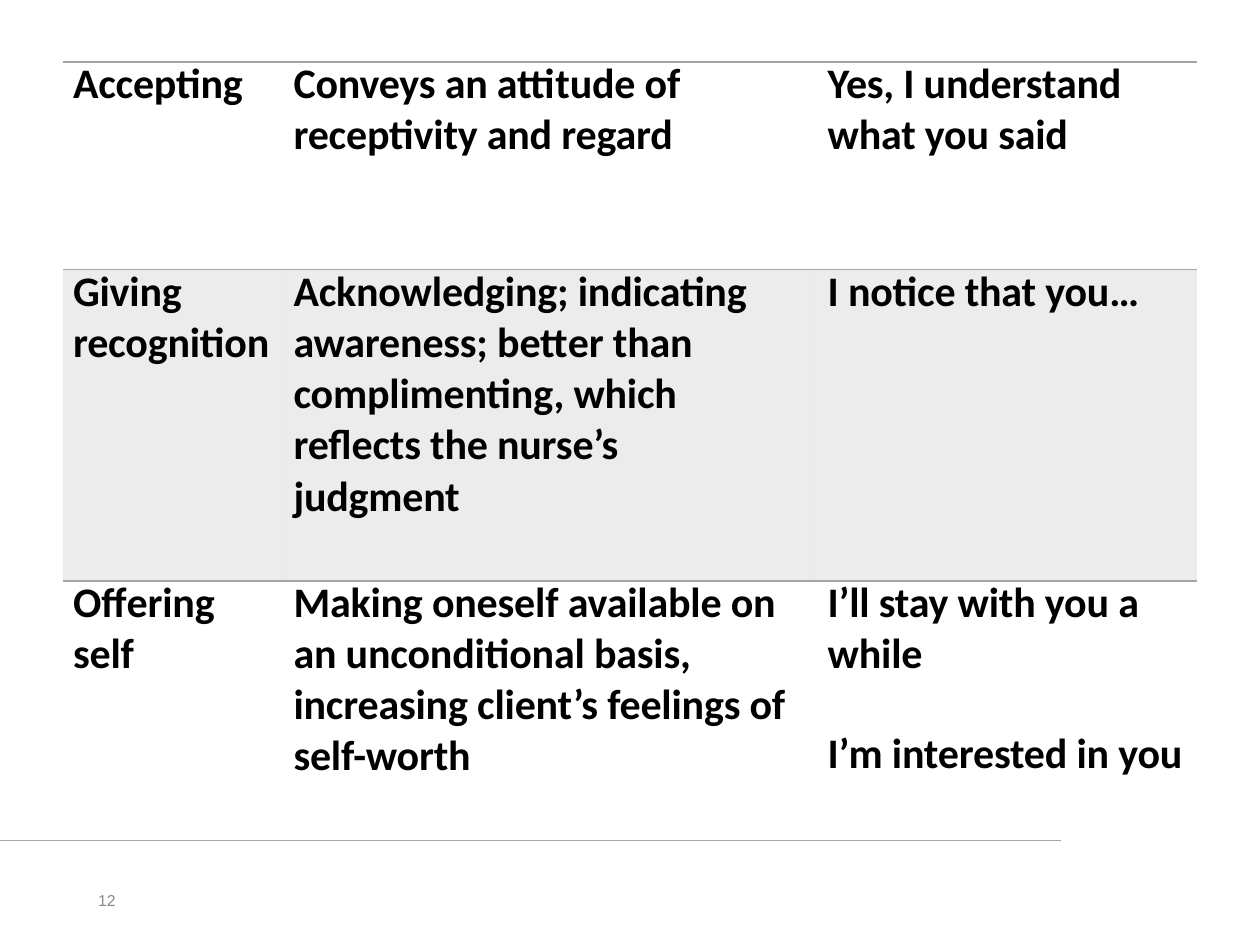
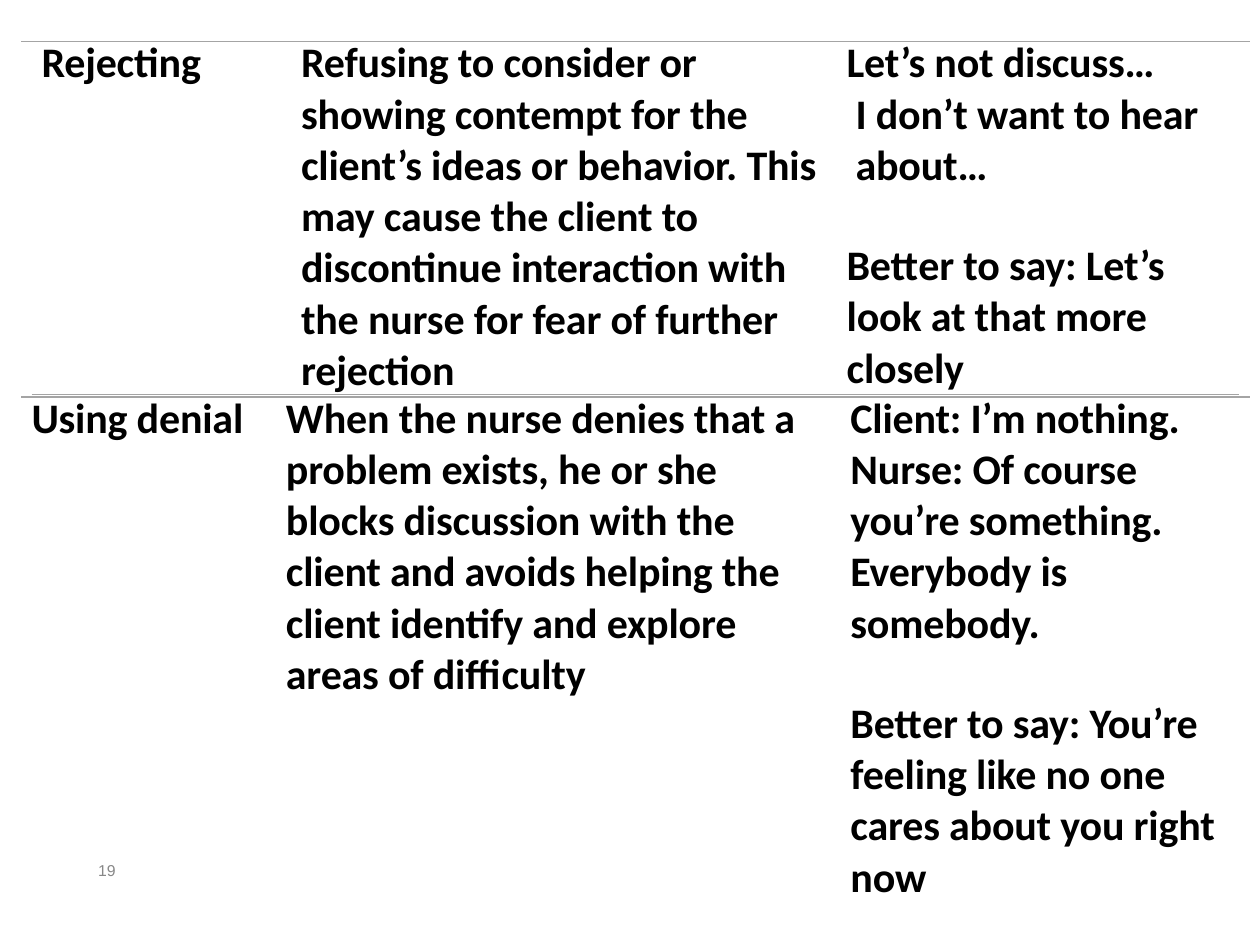
from dataclasses import dataclass

import pptx
import pptx.dml.color
import pptx.enum.shapes
import pptx.oxml
import pptx.oxml.ns
import pptx.util
from lxml import etree
from pptx.util import Inches, Pt

COLORS = {"text": "000000", "rule": "A4A4A4", "band": "A4A4A4", "number": "888888"}
BODY = {"name": "Calibri", "size": Pt(24), "bold": True}
NUMBER = {"name": "Arial", "size": Pt(9), "bold": False}
NO_STYLE = "{2D5ABB26-0587-4C30-8999-92F81FD0307C}"
FIRST_LINE = Pt(27.3)
GAP = 28


@dataclass
class Para:
    text: str
    gap: float = 0
    indent: float = 0


TECHNIQUES = [
    [[Para("Accepting")],
     [Para("Conveys an attitude of"), Para("receptivity and regard")],
     [Para("Yes, I understand"), Para("what you said")]],
    [[Para("Giving"), Para("recognition")],
     [Para("Acknowledging; indicating"), Para("awareness; better than complimenting, which"),
      Para("reflects the nurse’s\vjudgment")],
     [Para("I notice that you…")]],
    [[Para("Offering"), Para("self")],
     [Para("Making oneself available on"),
      Para("an unconditional basis, increasing client’s feelings of"), Para("self-worth")],
     [Para("I’ll stay with you a"), Para("while"), Para("I’m interested in you", GAP)]],
]
BARRIERS = [
    [[Para("Rejecting")],
     [Para("Refusing to consider or"),
      Para("showing contempt for the client’s ideas or behavior. This may cause the client to "
           "discontinue interaction with\vthe nurse for fear of further"),
      Para("rejection")],
     [Para("Let’s not discuss…"), Para("I don’t want to hear about…", indent=0.07),
      Para("Better to say: Let’s\vlook at that more closely", GAP)]],
    [[Para("Using denial")],
     [Para("When the nurse denies that a"),
      Para("problem exists, he or she\vblocks discussion with the\vclient and avoids helping the "
           "client identify and explore"),
      Para("areas of difficulty")],
     [Para("Client: I’m nothing."),
      Para("Nurse: Of course\vyou’re something. Everybody is\vsomebody."),
      Para("Better to say: You’re\vfeeling like no one\vcares about you right"), Para("now")]],
]
BARRIERS[1][2][2].gap = GAP


def rgb(name):
    return pptx.dml.color.RGBColor.from_string(COLORS[name])


def set_font(font, values, color):
    for key, value in values.items():
        setattr(font, key, value)
    font.color.rgb = rgb(color)


def add_rule(s, left, top, width):
    line = s.shapes.add_connector(pptx.enum.shapes.MSO_CONNECTOR.STRAIGHT, Inches(left),
                                  Inches(top), Inches(left + width), Inches(top))
    line.line.color.rgb = rgb("rule")
    line.line.width = Pt(1)
    etree.SubElement(line._element.spPr, pptx.oxml.ns.qn("a:effectLst"))


def add_page_number(s, number, left, top):
    box = s.shapes.add_textbox(Inches(left), Inches(top), Inches(0.16), Inches(0.18))
    tf = box.text_frame
    tf.word_wrap = False
    for side in ("left", "top", "right", "bottom"):
        setattr(tf, f"margin_{side}", 0)
    r = tf.paragraphs[0].add_run()
    r.text = str(number)
    set_font(r.font, NUMBER, "number")


def add_top_border(cell):
    cell._tc.get_or_add_tcPr().insert(0, pptx.oxml.parse_xml(
        f'<a:lnT {pptx.oxml.ns.nsdecls("a")} w="12700"><a:solidFill>'
        f'<a:srgbClr val="{COLORS["rule"]}"/></a:solidFill></a:lnT>'))


def shade(cell):
    """Fill a cell with the band colour at 20 % opacity."""
    cell.fill.solid()
    cell.fill.fore_color.rgb = rgb("band")
    color = cell._tc.tcPr.find(".//" + pptx.oxml.ns.qn("a:srgbClr"))
    etree.SubElement(color, pptx.oxml.ns.qn("a:alpha"), val="20000")


def fill_cell(cell, paras, indent):
    cell.margin_left = Inches(indent)
    cell.margin_top = cell.margin_right = cell.margin_bottom = 0
    tf = cell.text_frame
    for i, para in enumerate(paras):
        p = tf.paragraphs[0] if i == 0 else tf.add_paragraph()
        p.text = para.text
        if para.indent:
            p._p.get_or_add_pPr().set("marL", str(Inches(para.indent)))
        if i == 0:
            p.line_spacing = FIRST_LINE
        else:
            p.space_before = Pt(para.gap)
        for r in p.runs:
            set_font(r.font, BODY, "text")
            r._r.get_or_add_rPr().set("spc", "-10")


def add_phrase_table(s, left, top, widths, heights, rows, indents, banded=()):
    frame = s.shapes.add_table(len(heights), len(widths), Inches(left), Inches(top),
                               Inches(sum(widths)), Inches(sum(heights)))
    table = frame.table
    table.first_row = table.horz_banding = False
    table._tbl.tblPr.find(pptx.oxml.ns.qn("a:tableStyleId")).text = NO_STYLE
    for column, width in zip(table.columns, widths):
        column.width = Inches(width)
    for i, (height, row) in enumerate(zip(heights, rows)):
        table.rows[i].height = Inches(height)
        for j, paras in enumerate(row):
            cell = table.cell(i, j)
            fill_cell(cell, paras, indents[i][j])
            if i in banded:
                shade(cell)
            else:
                cell.fill.background()
            add_top_border(cell)


def build_techniques(s):
    add_page_number(s, 12, 0.78, 7.07)
    add_rule(s, -0.58, 6.67, 9)
    add_phrase_table(s, 0.5, 0.49, [1.74, 4.22, 3.04], [1.65, 2.47, 1.6], TECHNIQUES,
                     [[0.08, 0.09, 0.11]] * 3, banded=(1,))


def build_barriers(s):
    add_rule(s, 0.25, 3.13, 9.58)
    add_phrase_table(s, 0.17, 0.33, [1.94, 4.51, 3.3], [2.81, 4.12], BARRIERS,
                     [[0.16, 0.28, 0.1], [0.08, 0.16, 0.13]])
    add_page_number(s, 19, 0.78, 6.83)


def main():
    prs = pptx.Presentation()
    prs.slide_width, prs.slide_height = Inches(10), Inches(7.5)
    for build in (build_techniques, build_barriers):
        build(prs.slides.add_slide(prs.slide_layouts[6]))
    prs.save("out.pptx")


if __name__ == "__main__":
    main()
